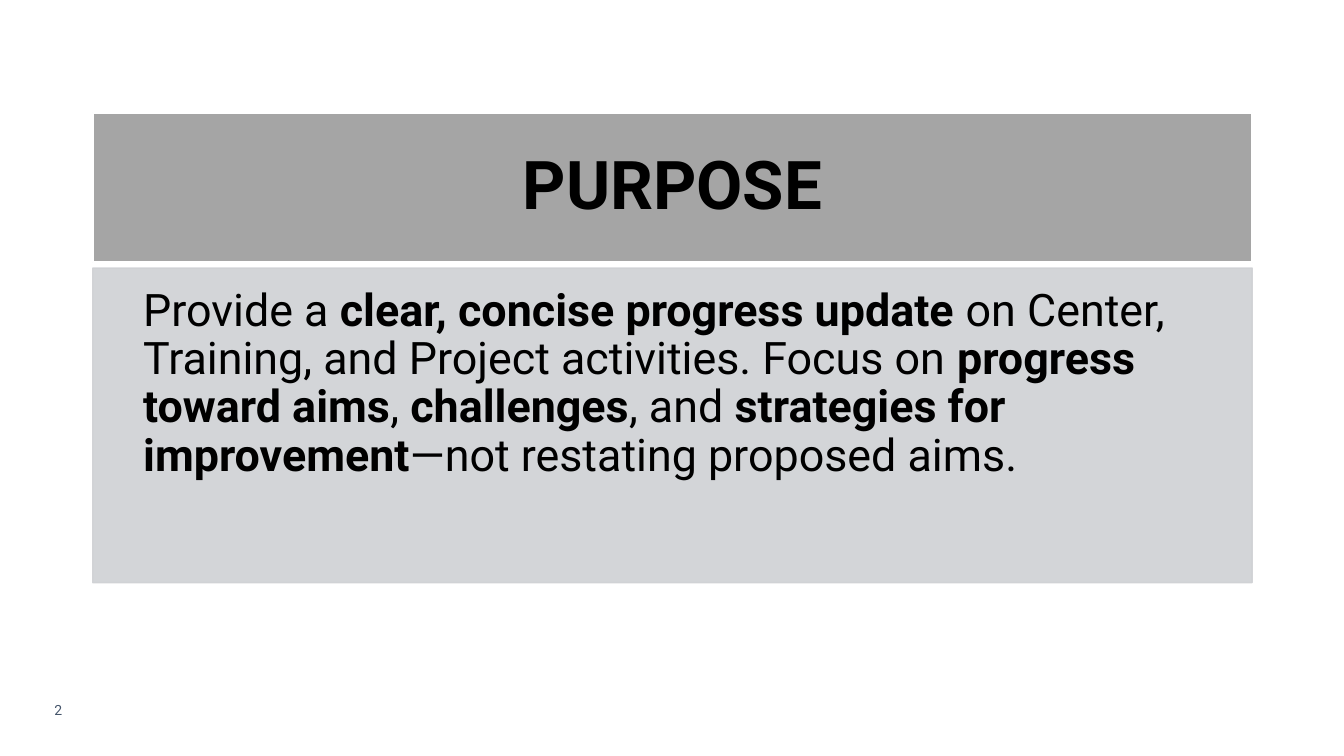
from dataclasses import dataclass

from pptx import Presentation
from pptx.dml.color import RGBColor
from pptx.enum.shapes import MSO_SHAPE
from pptx.enum.text import MSO_ANCHOR, PP_ALIGN
from pptx.oxml.ns import qn
from pptx.util import Inches, Pt

RECTANGLE = MSO_SHAPE.RECTANGLE
TOP, MIDDLE = MSO_ANCHOR.TOP, MSO_ANCHOR.MIDDLE
LEFT, CENTER = PP_ALIGN.LEFT, PP_ALIGN.CENTER


@dataclass(frozen=True)
class Theme:
    """Colours, font and type sizes of the slide."""

    font: str = "Roboto"
    ink: str = "000000"
    muted: str = "44546A"
    white: str = "FFFFFF"
    header: str = "A5A5A5"
    panel: str = "CFD1D4"
    title_size: int = 48
    body_size: int = 32
    number_size: int = 10


class SlideBuilder:
    """Draws styled elements on the current slide."""

    def __init__(self, slide, theme):
        self.slide = slide
        self.theme = theme

    def add_runs(self, frame, runs, size, color, align=LEFT, spacing=1.0):
        paragraph = frame.paragraphs[0]
        paragraph.alignment = align
        paragraph.line_spacing = spacing
        for words, bold in runs:
            run = paragraph.add_run()
            run.text = words
            run.font.name = self.theme.font
            run.font.size = Pt(size)
            run.font.bold = bold
            run.font.color.rgb = RGBColor.from_string(color)

    def band(self, box, fill, outline, outline_width, runs, size, insets,
             anchor=TOP, align=LEFT, opacity=100):
        band = self.slide.shapes.add_shape(RECTANGLE, *map(Inches, box))
        band.shadow.inherit = False
        band.fill.solid()
        band.fill.fore_color.rgb = RGBColor.from_string(fill)
        band.line.color.rgb = RGBColor.from_string(outline)
        band.line.width = Pt(outline_width)
        if opacity < 100:
            for color in band._element.spPr.iter(qn("a:srgbClr")):
                alpha = color.makeelement(qn("a:alpha"), {"val": str(opacity * 1000)})
                color.append(alpha)
        frame = band.text_frame
        frame.word_wrap = True
        frame.vertical_anchor = anchor
        (frame.margin_left, frame.margin_top,
         frame.margin_right, frame.margin_bottom) = map(Inches, insets)
        self.add_runs(frame, runs, size, self.theme.ink, align, 0.9)

    def page_number(self, box, number):
        label = self.slide.shapes.add_textbox(*map(Inches, box))
        label.text_frame.word_wrap = False
        self.add_runs(label.text_frame, [(number, False)],
                      self.theme.number_size, self.theme.muted)


def main():
    """Build the purpose slide and save it."""
    deck = Presentation()
    deck.slide_width, deck.slide_height = Inches(13.33), Inches(7.5)
    theme = Theme()
    builder = SlideBuilder(deck.slides.add_slide(deck.slide_layouts[6]), theme)
    left, width = 0.92, 11.5
    purpose = [
        ("Provide a ", False),
        ("clear, concise progress update", True),
        (" on Center, Training, and Project activities. Focus on ", False),
        ("progress toward aims", True),
        (", ", False),
        ("challenges", True),
        (", and ", False),
        ("strategies for improvement", True),
        ("—not restating proposed aims.", False),
    ]
    builder.page_number((0.44, 6.91, 0.39, 0.27), "2")
    builder.band((left, 1.12, width, 1.48), theme.header, theme.white, 1.5,
                 [("PURPOSE", True)], theme.title_size,
                 (0.37, 0.21, 0.37, 0.21), MIDDLE, CENTER)
    builder.band((left, 2.66, width, 3.12), theme.panel, theme.panel, 1,
                 purpose, theme.body_size, (0.5, 0.19, 0.25, 0.28), opacity=90)
    deck.save("out.pptx")


if __name__ == "__main__":
    main()
